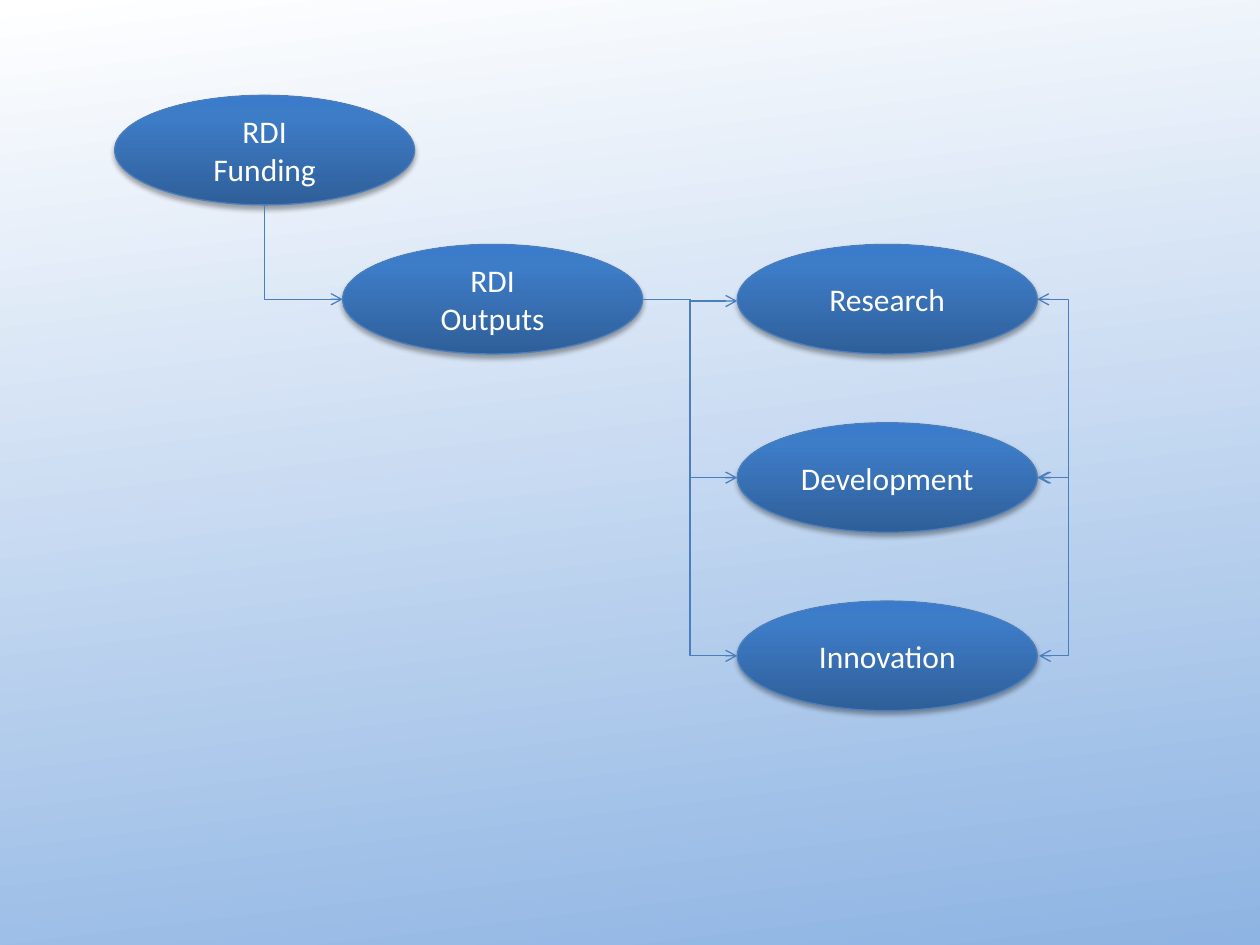
from copy import deepcopy
from dataclasses import dataclass

from lxml.etree import SubElement
from pptx import Presentation
from pptx.dml.color import RGBColor as RGB
from pptx.enum.shapes import MSO_CONNECTOR as Connector, MSO_SHAPE as Shape
from pptx.enum.text import MSO_ANCHOR as Anchor, PP_ALIGN as Align
from pptx.oxml.ns import qn
from pptx.util import Pt


@dataclass(frozen=True)
class Theme:
    page_stops: tuple = ((0, "FFFFFF"), (1, "8EB4E3"))
    oval_stops: tuple = ((0, "2F5F99"), (0.8, "3D7CC7"), (1, "3A7CCB"))
    line: str = "4B7EBC"
    text: str = "FFFFFF"
    shadow: str = "000000"
    font: str = "Calibri"
    size: float = 18
    line_width: float = 0.75


THEME = Theme()
OVAL_WIDTH, OVAL_HEIGHT = 171.4, 62.6
FUNDING_LEFT, FUNDING_TOP = 65.5, 54.5
OUTPUTS_LEFT, RESULTS_LEFT = 195.8, 421.3
RESULTS_TOP, RESULT_PITCH = 139.7, 101.9
RESULTS = ("Research", "Development", "Innovation")


def set_values(target, values):
    for name, value in values.items():
        setattr(target, name, value)


def paint_gradient(fill, element, stops, angle):
    fill.gradient()
    fill.gradient_angle = angle
    stop_list = next(element.iter(qn("a:gsLst")))
    for _ in stops[2:]:
        stop_list.append(deepcopy(stop_list[0]))
    for stop, (position, color) in zip(fill.gradient_stops, stops):
        stop.position = position
        stop.color.rgb = RGB.from_string(color)


def style_line(line):
    line.color.rgb = RGB.from_string(THEME.line)
    line.width = Pt(THEME.line_width)


def add_shadow(shape):
    shape.shadow.inherit = False
    effects = shape.element.spPr.find(qn("a:effectLst"))
    shadow = SubElement(effects, qn("a:outerShdw"), blurRad=str(Pt(3.1)),
                        dist=str(Pt(1.8)), dir="5400000", rotWithShape="0")
    color = SubElement(shadow, qn("a:srgbClr"), val=THEME.shadow)
    SubElement(color, qn("a:alpha"), val="35000")


def add_oval(page, left, top, lines):
    oval = page.shapes.add_shape(
        Shape.OVAL, Pt(left), Pt(top), Pt(OVAL_WIDTH), Pt(OVAL_HEIGHT))
    paint_gradient(oval.fill, oval.element, THEME.oval_stops, 90)
    style_line(oval.line)
    add_shadow(oval)
    frame = oval.text_frame
    set_values(frame, {"word_wrap": True, "vertical_anchor": Anchor.MIDDLE})
    for index, text in enumerate(lines):
        para = frame.add_paragraph() if index else frame.paragraphs[0]
        para.alignment = Align.CENTER
        span = para.add_run()
        span.text = text
        set_values(span.font, {"name": THEME.font, "size": Pt(THEME.size)})
        span.font.color.rgb = RGB.from_string(THEME.text)


def add_elbow(page, start, end, ends=("tailEnd",), bend=None):
    elbow = page.shapes.add_connector(
        Connector.ELBOW, *(Pt(value) for value in (*start, *end)))
    style_line(elbow.line)
    properties = elbow.element.spPr
    outline = properties.find(qn("a:ln"))
    for name in ends:
        SubElement(outline, qn(f"a:{name}"), type="arrow")
    SubElement(properties, qn("a:effectLst"))
    if bend is not None:
        guides = next(properties.iter(qn("a:avLst")))
        SubElement(guides, qn("a:gd"), name="adj1", fmla=f"val {bend * 100000}")
    return elbow


def add_drop(page, start, end):
    (x1, y1), (x2, y2) = start, end
    middle_x, middle_y = (x1 + x2) / 2, (y1 + y2) / 2
    half_width, half_height = (y2 - y1) / 2, (x2 - x1) / 2
    drop = add_elbow(page, (middle_x + half_width, middle_y - half_height),
                     (middle_x - half_width, middle_y + half_height))
    properties = drop.element.spPr
    properties.find(qn("a:xfrm")).set("rot", "16200000")
    properties.find(qn("a:prstGeom")).set("prst", "bentConnector2")


def main():
    deck = Presentation()
    set_values(deck, {"slide_width": Pt(720), "slide_height": Pt(540)})
    page = deck.slides.add_slide(deck.slide_layouts[6])
    paint_gradient(page.background.fill, page.element, THEME.page_stops, 277)

    add_oval(page, FUNDING_LEFT, FUNDING_TOP, ("RDI", "Funding"))
    add_oval(page, OUTPUTS_LEFT, RESULTS_TOP, ("RDI", "Outputs"))
    for row, name in enumerate(RESULTS):
        add_oval(page, RESULTS_LEFT, RESULTS_TOP + row * RESULT_PITCH, (name,))

    centers = [RESULTS_TOP + OVAL_HEIGHT / 2 + row * RESULT_PITCH
               for row in range(len(RESULTS))]
    add_drop(page, (FUNDING_LEFT + OVAL_WIDTH / 2, FUNDING_TOP + OVAL_HEIGHT),
             (OUTPUTS_LEFT, centers[0]))
    outputs_right = OUTPUTS_LEFT + OVAL_WIDTH
    for target in (centers[0] + 1, *centers[1:]):
        add_elbow(page, (outputs_right, centers[0]), (RESULTS_LEFT, target))
    results_right = RESULTS_LEFT + OVAL_WIDTH
    for upper, lower in zip(centers, centers[1:]):
        add_elbow(page, (results_right, upper), (results_right + 1, lower),
                  ("headEnd", "tailEnd"), 18)

    deck.save("out.pptx")


if __name__ == "__main__":
    main()
